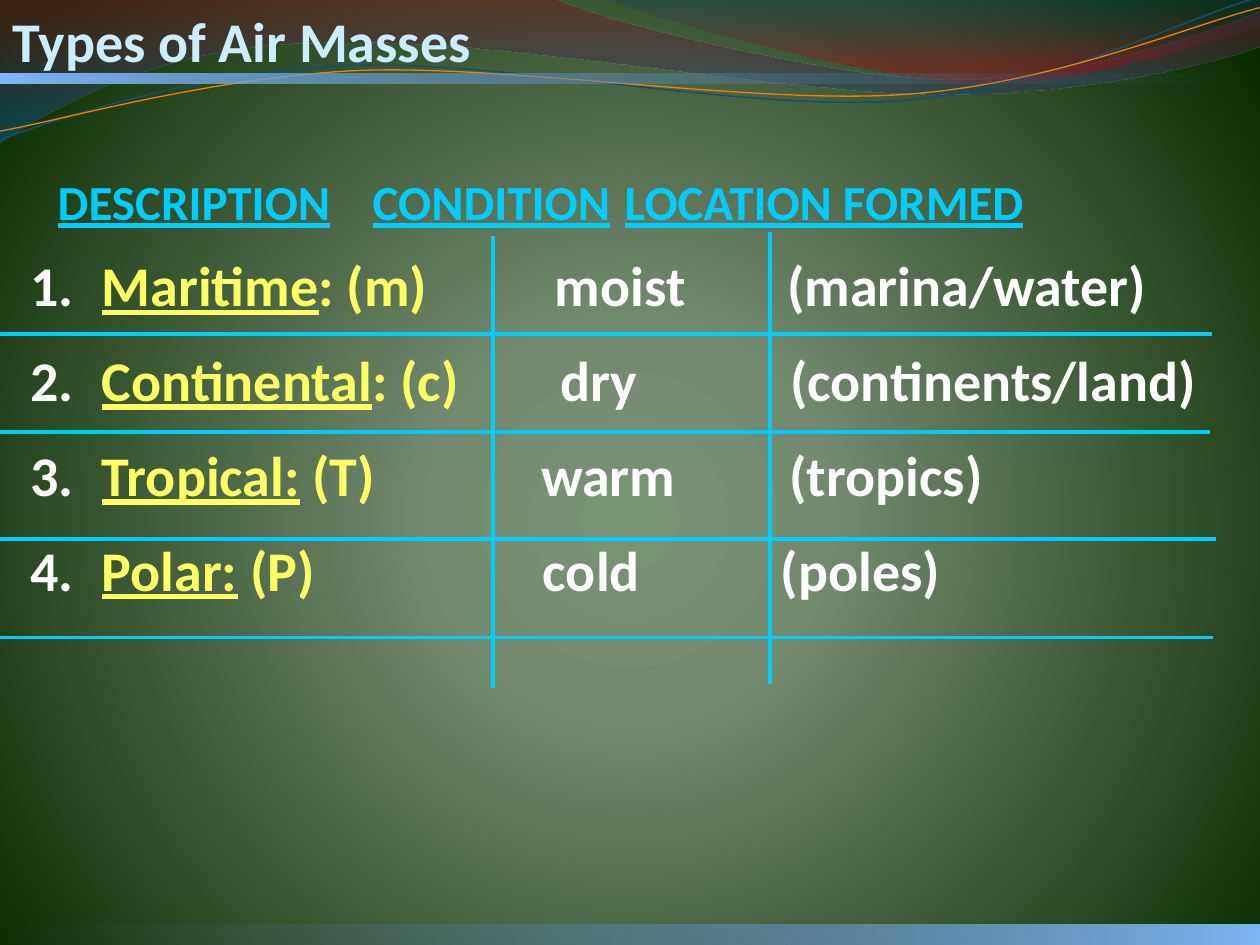
"""Build the slide that tabulates the four types of air masses."""

from dataclasses import dataclass

from lxml import etree
from pptx import Presentation
from pptx.dml.color import RGBColor
from pptx.enum.shapes import MSO_CONNECTOR, MSO_SHAPE
from pptx.enum.text import MSO_ANCHOR, PP_ALIGN
from pptx.oxml.ns import qn
from pptx.util import Pt

STRAIGHT = MSO_CONNECTOR.STRAIGHT
RECTANGLE = MSO_SHAPE.RECTANGLE
TOP = MSO_ANCHOR.TOP
LEFT = PP_ALIGN.LEFT

FONT = "Calibri"
TITLE_ONLY = 5
ROW_GAP = 15.8
NAME_TAB = 41
COLORS = {
    "title": "CCECFF", "heading": "00CCFF", "name": "FFFF66", "text": "FFFFFF",
    "glow": "799375", "moss": "738A6F", "forest": "092B00",
    "bar": "7EB7F6", "bar_end": "3A5572", "crimson": "7E1621", "ocean": "005689",
    "navy": "094467", "red": "A10F1F", "blue_wave": "184E6D", "orange_wave": "F07F09",
}


@dataclass(frozen=True)
class Stop:
    position: int
    color: str
    opacity: int = 100


@dataclass(frozen=True)
class Wave:
    start: tuple
    segments: tuple
    stops: tuple = ()
    line_color: str = ""
    line_width: float = 0


@dataclass(frozen=True)
class AirMass:
    name: str
    symbol: str
    condition: str
    location: str
    condition_tab: float
    location_tab: float


@dataclass(frozen=True)
class Rule:
    left: float
    top: float
    width: float = 0
    height: float = 0


WAVES = (
    Wave((0, -0.7), (
        (316.8, -0.7),
        (342.7, 12.2, 478.1, 45.4, 545.8, 45.4),
        (614.2, 45.4, 689.8, 18.7, 720, 6.5),
        (720.7, 25.9),
        (709.2, 31.7, 626.4, 54.7, 537.1, 54),
        (447.8, 54, 275, 20.2, 185, 24.5),
        (92.9, 25.2, 33.1, 59.8, -0.7, 81.4),
    ), stops=(Stop(0, "crimson", 45), Stop(100, "ocean", 55))),
    Wave((344.9, -0.7), (
        (366.5, 7.9, 491, 44.6, 553.7, 46.8),
        (616.3, 49.7, 691.9, 23, 720, 15.1),
        (720, 0),
    ), stops=(Stop(0, "navy", 30), Stop(80, "red", 45))),
    Wave((0, 79.9), (
        (34.6, 67, 113.8, 41, 199.4, 37.4),
        (284.4, 33.8, 427, 64.1, 513.4, 57.6),
        (599.8, 51.1, 675.4, 10.8, 718.6, -1.4),
    ), line_color="blue_wave", line_width=0.85),
    Wave((0, 74.9), (
        (33.8, 69.1, 118.1, 44.6, 203.8, 40.3),
        (290.2, 36.7, 429.8, 59.8, 516.2, 54),
        (601.9, 48.2, 677.5, 15.1, 720, 4.3),
    ), line_color="orange_wave", line_width=0.75),
)
AIR_MASSES = (
    AirMass("Maritime", ": (m)", "moist", "(marina/water)", 300, 432.8),
    AirMass("Continental", ": (c)", "dry", "(continents/land)", 303, 434.4),
    AirMass("Tropical:", " (T)", "warm", "(tropics)", 292, 434),
    AirMass("Polar:", " (P)", "cold", "(poles)", 293, 429),
)
HEADINGS = ("DESCRIPTION", "CONDITION", "LOCATION FORMED")
HEADING_TABS = (237.8, 405.2)
RULES = (
    Rule(281.5, 134.6, height=258.5), Rule(439.9, 132.5, height=258.5),
    Rule(-5.8, 190.8, width=698.4), Rule(-7.2, 247, width=698.4),
    Rule(-3.6, 308.2, width=698.4), Rule(-5, 364.3, width=698.4),
)


def rgb(name: str) -> RGBColor:
    return RGBColor.from_string(COLORS[name])


def apply_gradient(fill, properties, stops: tuple, angle: int = 0, center: dict | None = None) -> None:
    fill.solid()
    gradient = etree.Element(qn("a:gradFill"), rotWithShape="1")
    stop_list = etree.SubElement(gradient, qn("a:gsLst"))
    for stop in stops:
        entry = etree.SubElement(stop_list, qn("a:gs"), pos=str(stop.position * 1000))
        color = etree.SubElement(entry, qn("a:srgbClr"), val=COLORS[stop.color])
        if stop.opacity < 100:
            etree.SubElement(color, qn("a:alpha"), val=str(stop.opacity * 1000))
    if center:
        shade = etree.SubElement(gradient, qn("a:path"), path="circle")
        etree.SubElement(shade, qn("a:fillToRect"),
                         {side: str(share * 1000) for side, share in center.items()})
    else:
        etree.SubElement(gradient, qn("a:lin"), ang=str(angle * 60000), scaled="0")
    properties.replace(properties.find(qn("a:solidFill")), gradient)


def bend_segments(shape, wave: Wave) -> None:
    corners = [wave.start] + [segment[-2:] for segment in wave.segments]
    left, top = (min(values) for values in zip(*corners))
    straight_lines = list(shape.element.spPr.iter(qn("a:lnTo")))
    for line, segment in zip(straight_lines, wave.segments):
        if len(segment) == 2:
            continue
        curve = etree.Element(qn("a:cubicBezTo"))
        for x, y in zip(segment[::2], segment[1::2]):
            etree.SubElement(curve, qn("a:pt"), x=str(int(Pt(x - left))), y=str(int(Pt(y - top))))
        line.getparent().replace(line, curve)


def draw_wave(page, wave: Wave) -> None:
    builder = page.shapes.build_freeform(*map(Pt, wave.start))
    corners = [tuple(map(Pt, segment[-2:])) for segment in wave.segments]
    builder.add_line_segments(corners, close=bool(wave.stops))
    shape = builder.convert_to_shape()
    bend_segments(shape, wave)
    shape.shadow.inherit = False
    if wave.stops:
        apply_gradient(shape.fill, shape.element.spPr, wave.stops, angle=90)
        shape.line.fill.background()
    else:
        shape.fill.background()
        shape.line.color.rgb = rgb(wave.line_color)
        shape.line.width = Pt(wave.line_width)


def draw_bar(page, top: float, height: float, rotation: int) -> None:
    bar = page.shapes.add_shape(RECTANGLE, Pt(0), Pt(top), Pt(720), Pt(height))
    bar.shadow.inherit = False
    bar.rotation = rotation
    apply_gradient(bar.fill, bar.element.spPr, (Stop(0, "bar"), Stop(100, "bar_end", 0)))
    bar.line.fill.background()


def add_span(para, text: str, *, size: int = 32, color: str = "text", underline: bool = False) -> None:
    span = para.add_run()
    span.text = text
    span.font.name = FONT
    span.font.size = Pt(size)
    span.font.bold = True
    span.font.underline = underline
    span.font.color.rgb = rgb(color)


def add_text_frame(page, left: float, top: float, width: float, height: float):
    box = page.shapes.add_textbox(Pt(left), Pt(top), Pt(width), Pt(height))
    box.text_frame.word_wrap = True
    return box.text_frame


def format_paragraph(para, tabs: tuple, numbered: bool = False) -> None:
    properties = para._p.get_or_add_pPr()
    properties.set("marL", "0")
    properties.set("indent", "0")
    if numbered:
        etree.SubElement(properties, qn("a:buFont"), typeface="+mj-lt")
        etree.SubElement(properties, qn("a:buAutoNum"), type="arabicPeriod")
    tab_list = etree.SubElement(properties, qn("a:tabLst"))
    for tab in tabs:
        etree.SubElement(tab_list, qn("a:tab"), pos=str(int(Pt(tab))), algn="l")


def draw_air_masses(page) -> None:
    frame = add_text_frame(page, 10.1, 139.7, 810.7, 276.5)
    for index, mass in enumerate(AIR_MASSES):
        para = frame.add_paragraph() if index else frame.paragraphs[0]
        para.space_before = Pt(ROW_GAP if index else 0)
        format_paragraph(para, (NAME_TAB, mass.condition_tab, mass.location_tab), numbered=True)
        add_span(para, "\t")
        add_span(para, mass.name, color="name", underline=True)
        add_span(para, mass.symbol, color="name")
        add_span(para, f"\t{mass.condition}\t{mass.location}")


def draw_headings(page) -> None:
    para = add_text_frame(page, 25.9, 94.5, 677.5, 41).paragraphs[0]
    format_paragraph(para, HEADING_TABS)
    for index, heading in enumerate(HEADINGS):
        if index:
            add_span(para, "\t", size=28, color="heading")
        add_span(para, heading, size=28, color="heading", underline=True)


def draw_rule(page, rule: Rule) -> None:
    line = page.shapes.add_connector(STRAIGHT, Pt(rule.left), Pt(rule.top),
                                     Pt(rule.left + rule.width), Pt(rule.top + rule.height))
    line.line.color.rgb = rgb("heading")
    line.line.width = Pt(2.25)
    etree.SubElement(line.element.spPr, qn("a:effectLst"))


def place_title(page, text: str) -> None:
    title = page.shapes.title
    title.left, title.top, title.width, title.height = Pt(0), Pt(0), Pt(471), Pt(46)
    title.text_frame.vertical_anchor = TOP
    para = title.text_frame.paragraphs[0]
    para.alignment = LEFT
    add_span(para, text, color="title")
    title.element.getparent().append(title.element)


def main() -> None:
    deck = Presentation()
    deck.slide_width, deck.slide_height = Pt(720), Pt(540)
    page = deck.slides.add_slide(deck.slide_layouts[TITLE_ONLY])
    fill = page.background.fill
    fill.solid()
    apply_gradient(fill, page.element.find(".//" + qn("p:bgPr")),
                   (Stop(0, "glow"), Stop(25, "moss"), Stop(100, "forest")),
                   center={"l": 10, "t": 110, "r": 10, "b": 100})
    for wave in WAVES:
        draw_wave(page, wave)
    draw_bar(page, 41.8, 6, 0)
    draw_bar(page, 528, 12, 180)
    place_title(page, "Types of Air Masses")
    draw_air_masses(page)
    draw_headings(page)
    for rule in RULES:
        draw_rule(page, rule)
    deck.save("out.pptx")


if __name__ == "__main__":
    main()
